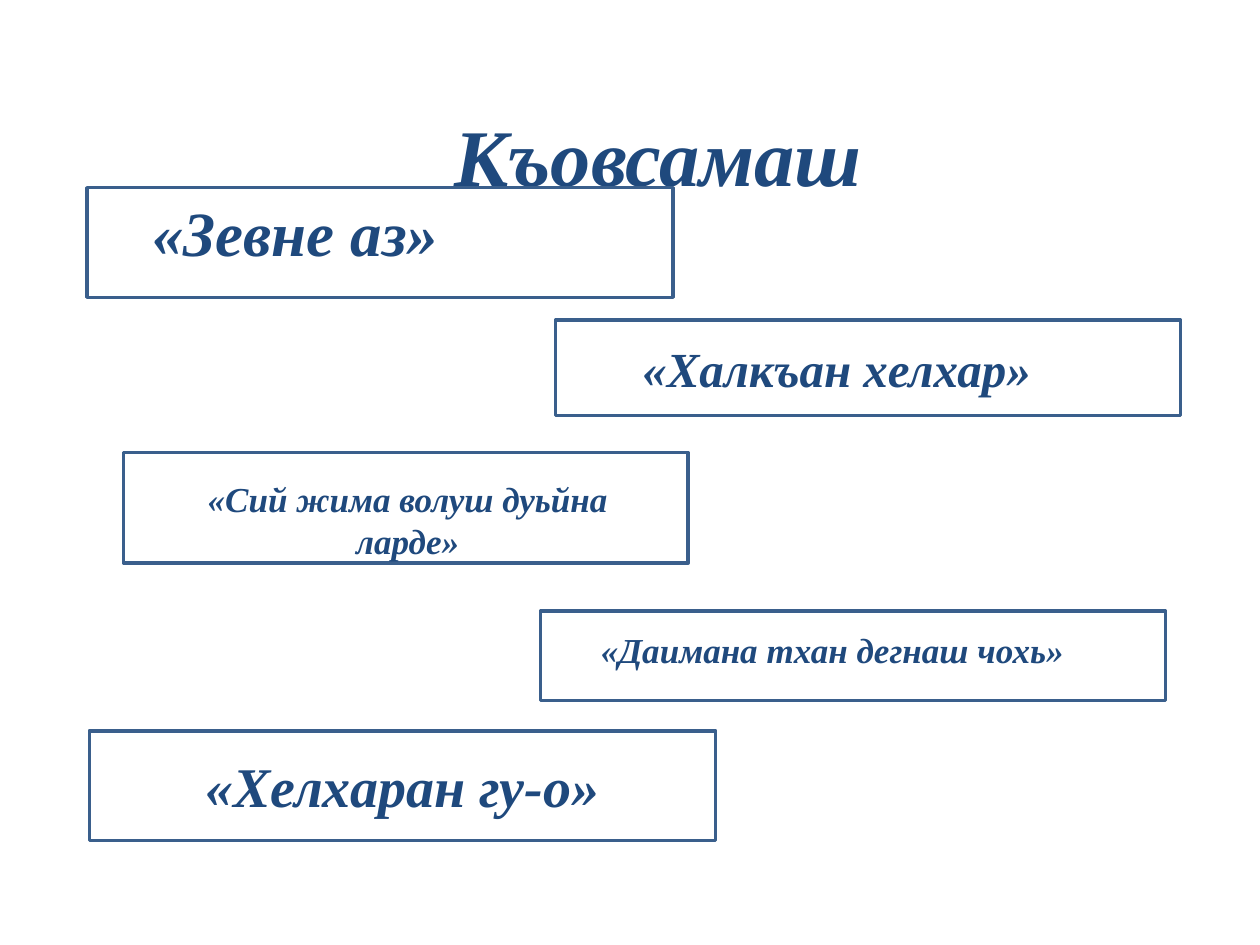
"""Build the slide listing the contests under one heading."""
from pptx import Presentation
from pptx.dml.color import RGBColor
from pptx.enum.shapes import MSO_SHAPE
from pptx.enum.text import MSO_ANCHOR, PP_ALIGN
from pptx.util import Inches, Pt

RECTANGLE = MSO_SHAPE.RECTANGLE
MIDDLE, TOP = MSO_ANCHOR.MIDDLE, MSO_ANCHOR.TOP
LEFT, CENTER = PP_ALIGN.LEFT, PP_ALIGN.CENTER

FONT = "Times New Roman"
TEXT_COLOR = "1F497D"
FRAME_COLOR = "3A5F8C"

HEADING = ("Къовсамаш", 45.9, CENTER, (0.7, 0.7, 8.67, 1.08))
FRAMES = [
    (0.69, 1.49, 4.65, 0.87),
    (0.98, 3.59, 4.48, 0.88),
    (4.41, 2.54, 4.96, 0.76),
    (4.29, 4.85, 4.96, 0.71),
]
FRAMED_CONTEST = ("«Хелхаран гу-о»", 32, (0.71, 5.8, 4.97, 0.87))
CONTESTS = [
    ("«Зевне аз»", 36, CENTER, (0.71, 1.49, 3.27, 0.71)),
    ("«Халкъан хелхар»", 28, LEFT, (5, 2.64, 3.46, 0.57)),
    ("«Сий жима волуш дуьйна ларде»", 20, CENTER, (1.14, 3.74, 4.19, 0.77)),
    ("«Даимана тхан дегнаш чохь»", 20, LEFT, (4.67, 4.94, 4.13, 0.44)),
]


def color(hex_string):
    return RGBColor.from_string(hex_string)


def write(shape, text, size, alignment, anchor=TOP):
    frame = shape.text_frame
    frame.word_wrap = True
    frame.vertical_anchor = anchor
    paragraph = frame.paragraphs[0]
    paragraph.text = text
    paragraph.alignment = alignment
    font = paragraph.font
    font.name, font.size = FONT, Pt(size)
    font.bold = font.italic = True
    font.color.rgb = color(TEXT_COLOR)


def add_frame(slide, box):
    shape = slide.shapes.add_shape(RECTANGLE, *map(Inches, box))
    shape.shadow.inherit = False
    shape.fill.background()
    shape.line.color.rgb = color(FRAME_COLOR)
    shape.line.width = Pt(2)
    return shape


def add_text(slide, text, size, alignment, box):
    shape = slide.shapes.add_textbox(*map(Inches, box))
    write(shape, text, size, alignment)
    return shape


def main():
    presentation = Presentation()
    presentation.slide_width = Inches(10)
    presentation.slide_height = Inches(7.5)
    slide = presentation.slides.add_slide(presentation.slide_layouts[6])

    heading = add_text(slide, *HEADING)
    heading.text_frame.margin_left = Inches(0.47)
    heading.text_frame.margin_top = Inches(0.14)

    for box in FRAMES:
        add_frame(slide, box)
    text, size, box = FRAMED_CONTEST
    write(add_frame(slide, box), text, size, CENTER, MIDDLE)
    for contest in CONTESTS:
        add_text(slide, *contest)

    presentation.save("out.pptx")


if __name__ == "__main__":
    main()
